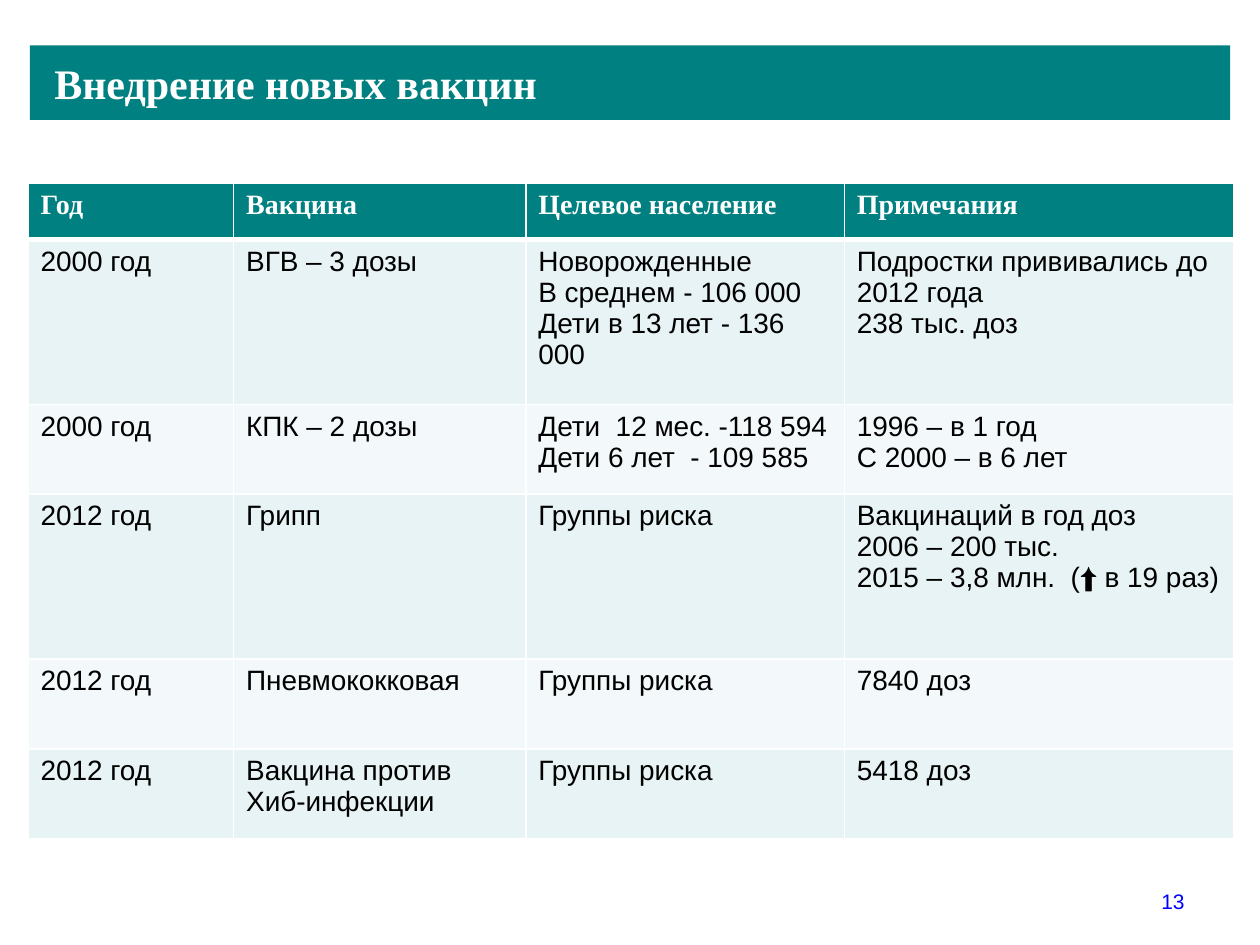
from dataclasses import dataclass

from lxml import etree
from pptx import Presentation
from pptx.dml.color import RGBColor
from pptx.enum.shapes import MSO_SHAPE
from pptx.enum.text import MSO_ANCHOR, PP_ALIGN
from pptx.oxml.ns import qn
from pptx.util import Pt

RECTANGLE = MSO_SHAPE.RECTANGLE
MIDDLE = MSO_ANCHOR.MIDDLE
LEFT, RIGHT = PP_ALIGN.LEFT, PP_ALIGN.RIGHT


@dataclass(frozen=True)
class Theme:
    teal: str = "008080"
    white: str = "FFFFFF"
    black: str = "000000"
    blue: str = "0000FF"
    bands: tuple = ("E7F3F4", "F3F9FA")
    heading_font: str = "Times New Roman"
    body_font: str = "Arial"
    title_size: int = 24
    table_size: int = 16
    number_size: int = 12
    rule: int = 1
    header_rule: int = 3


class SlideBuilder:
    def __init__(self, slide, theme):
        self.slide = slide
        self.theme = theme

    def add_lines(self, tf, lines, size, font, color, bold=False, align=LEFT):
        """Put each line in its own paragraph."""
        tf.word_wrap = True
        for i, line in enumerate(lines):
            p = tf.add_paragraph() if i else tf.paragraphs[0]
            p.alignment = align
            r = p.add_run()
            r.text = line
            r.font.size = Pt(size)
            r.font.name = font
            r.font.bold = bold
            r.font.color.rgb = RGBColor.from_string(color)

    def fill(self, target, color):
        target.fill.solid()
        target.fill.fore_color.rgb = RGBColor.from_string(color)

    def title_bar(self, text, x, y, w, h):
        t = self.theme
        sp = self.slide.shapes.add_shape(RECTANGLE, Pt(x), Pt(y), Pt(w), Pt(h))
        sp.shadow.inherit = False
        self.fill(sp, t.teal)
        sp.line.fill.background()
        tf = sp.text_frame
        tf.vertical_anchor = MIDDLE
        tf.margin_left = Pt(14)
        self.add_lines(tf, [text], t.title_size, t.heading_font, t.white, bold=True)

    def page_number(self, text, x, y, w, h):
        t = self.theme
        sp = self.slide.shapes.add_textbox(Pt(x), Pt(y), Pt(w), Pt(h))
        tf = sp.text_frame
        tf.vertical_anchor = MIDDLE
        self.add_lines(tf, [text], t.number_size, t.body_font, t.blue, align=RIGHT)

    def cell_borders(self, cell, top, bottom):
        t = self.theme
        widths = {"a:lnL": t.rule, "a:lnR": t.rule, "a:lnT": top, "a:lnB": bottom}
        tc_pr = cell._tc.get_or_add_tcPr()
        for i, (tag, width) in enumerate(widths.items()):
            ln = etree.Element(qn(tag), w=str(Pt(width)))
            solid = etree.SubElement(ln, qn("a:solidFill"))
            etree.SubElement(solid, qn("a:srgbClr"), val=t.white)
            tc_pr.insert(i, ln)

    def table(self, rows, x, y, col_widths, row_heights):
        """Draw rows of cells; the first row is the header, the rest are banded."""
        t = self.theme
        frame = self.slide.shapes.add_table(
            len(rows), len(col_widths), Pt(x), Pt(y),
            Pt(sum(col_widths)), Pt(sum(row_heights)))
        table = frame.table
        for column, width in zip(table.columns, col_widths):
            column.width = Pt(width)
        for row, height in zip(table.rows, row_heights):
            row.height = Pt(height)
        for i, row in enumerate(rows):
            header = i == 0
            font, color, band = (
                (t.heading_font, t.white, t.teal) if header
                else (t.body_font, t.black, t.bands[(i - 1) % 2]))
            top = t.header_rule if i == 1 else t.rule
            bottom = t.header_rule if header else t.rule
            for j, text in enumerate(row):
                cell = table.cell(i, j)
                self.fill(cell, band)
                self.cell_borders(cell, top, bottom)
                self.add_lines(cell.text_frame, text.split("\n"), t.table_size,
                               font, color, bold=header)


VACCINES = [
    ("Год", "Вакцина", "Целевое население", "Примечания"),
    ("2000 год", "ВГВ – 3 дозы",
     "Новорожденные\nВ среднем - 106 000\nДети в 13 лет - 136 000",
     "Подростки прививались до 2012 года\n238 тыс. доз"),
    ("2000 год", "КПК – 2 дозы",
     "Дети  12 мес. -118 594\nДети 6 лет  - 109 585",
     "1996 – в 1 год\nС 2000 – в 6 лет"),
    ("2012 год", "Грипп", "Группы риска",
     "Вакцинаций в год доз\n2006 – 200 тыс.\n2015 – 3,8 млн.  (⬆ в 19 раз)"),
    ("2012 год", "Пневмококковая", "Группы риска", "7840 доз"),
    ("2012 год", "Вакцина против Хиб-инфекции", "Группы риска", "5418 доз"),
]


def main():
    prs = Presentation()
    prs.slide_width, prs.slide_height = Pt(720), Pt(540)
    s = SlideBuilder(prs.slides.add_slide(prs.slide_layouts[6]), Theme())
    s.page_number("13", 516, 500.5, 168, 29)
    s.title_bar("Внедрение новых вакцин", 17, 26, 686, 42.5)
    header, tall, short = 32.4, 94.3, 51.2
    s.table(VACCINES, 16, 104.5, [117.5, 167, 182, 222.5],
            [header, tall, short, tall, short, short])
    prs.save("out.pptx")


if __name__ == "__main__":
    main()
